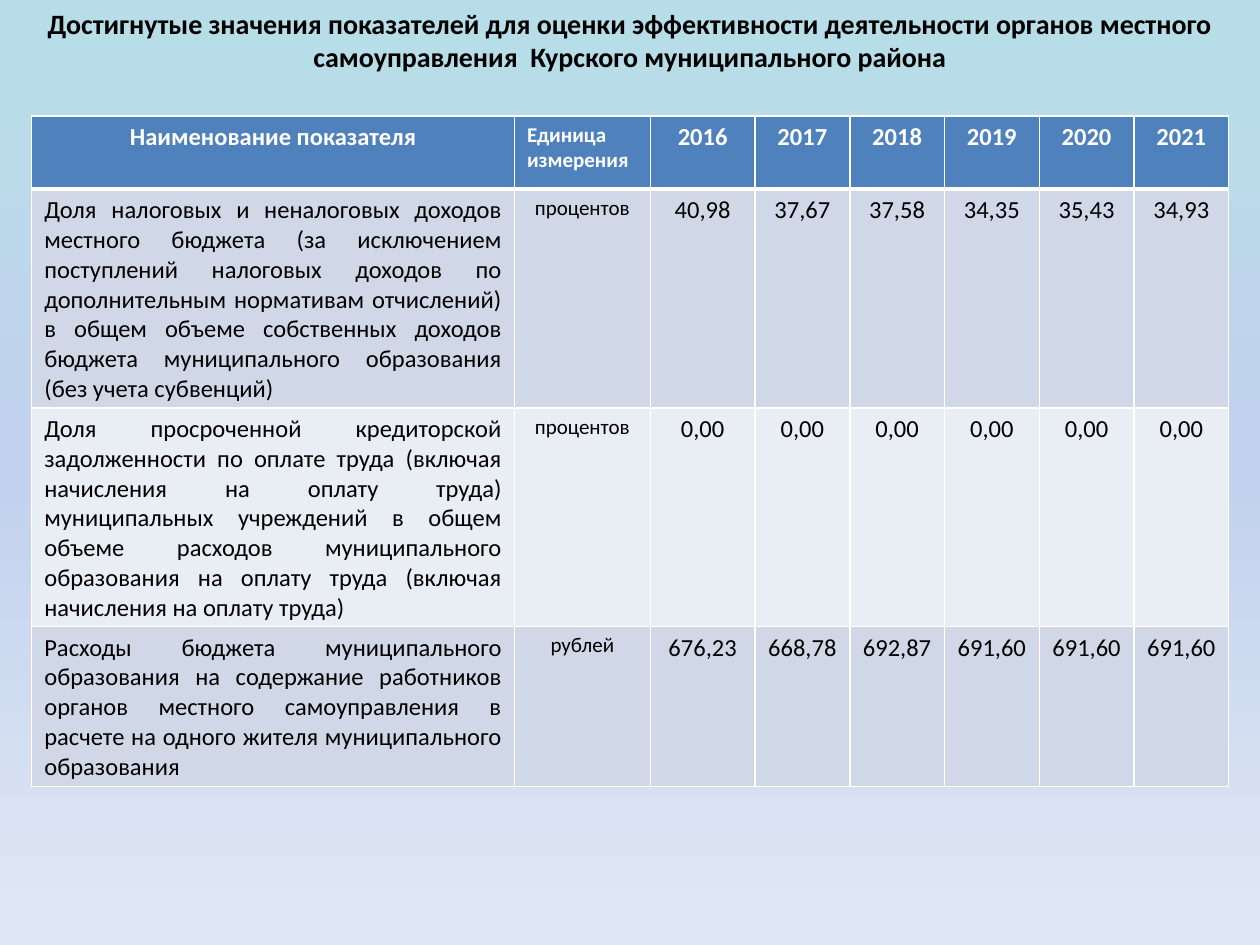
"""Build the slide with the table of municipal performance indicators."""
from dataclasses import dataclass

from lxml import etree
from pptx import Presentation
from pptx.dml.color import RGBColor
from pptx.enum import text as t
from pptx.oxml import ns
from pptx.util import Cm, Pt

FONT = "Calibri"
WHITE, BLACK, HEAD = "FFFFFF", "000000", "4F81BD"
BANDS = ("D0D8E8", "E9EDF4")
LEFT, MID, JUST = t.PP_ALIGN.LEFT, t.PP_ALIGN.CENTER, t.PP_ALIGN.JUSTIFY
STOPS = ((0, "B7DEE8"), (50, "C2D1ED"), (100, "E1E8F5"))
WIDTHS = (9.73, 2.74, 2.11) + (1.91,) * 5


@dataclass
class Row:
    name: str
    unit: str
    values: list[str]
    height: float


@dataclass
class Look:
    size: int
    align: t.PP_ALIGN
    color: str = BLACK
    bold: bool = False


ROWS = [
    Row("Наименование показателя", "Единица измерения",
        ["2016", "2017", "2018", "2019", "2020", "2021"], 1.47),
    Row("Доля налоговых и неналоговых доходов местного бюджета (за исключением "
        "поступлений налоговых доходов по дополнительным нормативам отчислений) "
        "в общем объеме собственных доходов бюджета муниципального образования "
        "(без учета субвенций)", "процентов",
        ["40,98", "37,67", "37,58", "34,35", "35,43", "34,93"], 4.41),
    Row("Доля просроченной кредиторской задолженности по оплате труда (включая "
        "начисления на оплату труда) муниципальных учреждений в общем объеме "
        "расходов муниципального образования на оплату труда (включая "
        "начисления на оплату труда)", "процентов", ["0,00"] * 6, 4.41),
    Row("Расходы бюджета муниципального образования на содержание работников "
        "органов местного самоуправления в расчете на одного жителя "
        "муниципального образования", "рублей",
        ["676,23", "668,78", "692,87", "691,60", "691,60", "691,60"], 3.22),
]


def rgb(code: str) -> RGBColor:
    """Turn a hex string into a colour."""
    return RGBColor.from_string(code)


def add(node, tag: str, **attrs: str):
    """Append a drawing element with its attributes."""
    return etree.SubElement(node, ns.qn(f"a:{tag}"), attrs)


def shade(slide) -> None:
    """Give the slide its vertical three-stop gradient."""
    fill = slide.background.fill
    fill.gradient()
    fill.gradient_angle = 270
    stops = slide.element.find(f".//{ns.qn('a:gsLst')}")
    for old in list(stops):
        stops.remove(old)
    for pos, code in STOPS:
        add(add(stops, "gs", pos=str(pos * 1000)), "srgbClr", val=code)


def write(frame, words: str, look: Look) -> None:
    """Put one formatted paragraph into a text frame."""
    frame.text = words
    para = frame.paragraphs[0]
    para.alignment = look.align
    font = para.font
    font.name, font.size, font.bold = FONT, Pt(look.size), look.bold
    font.color.rgb = rgb(look.color)


def edge(cell, base: int) -> None:
    """Draw white borders round a cell, with the given bottom width."""
    props = cell._tc.get_or_add_tcPr()
    for spot, side in enumerate("LRTB"):
        width = Pt(base if side == "B" else 1)
        line = add(props, f"ln{side}", w=str(width))
        add(add(line, "solidFill"), "srgbClr", val=WHITE)
        props.insert(spot, line)


def draw(slide, rows: list[Row]) -> None:
    """Draw the table of indicators."""
    frame = slide.shapes.add_table(
        len(rows), len(WIDTHS), Cm(0.64), Cm(2.34),
        Cm(sum(WIDTHS)), Cm(sum(row.height for row in rows)))
    table = frame.table
    for col, width in zip(table.columns, WIDTHS):
        col.width = Cm(width)
    for i, row in enumerate(rows):
        table.rows[i].height = Cm(row.height)
        top = i == 0
        ink = WHITE if top else BLACK
        looks = [Look(14, MID if top else JUST, ink, top),
                 Look(12, LEFT if top else MID, ink, top)]
        looks += [Look(14, MID, ink, top)] * len(row.values)
        for j, words in enumerate([row.name, row.unit, *row.values]):
            cell = table.cell(i, j)
            write(cell.text_frame, words, looks[j])
            cell.fill.solid()
            cell.fill.fore_color.rgb = rgb(HEAD if top else BANDS[(i - 1) % 2])
            edge(cell, 3 if top else 1)


def main() -> None:
    """Build and save the slide."""
    deck = Presentation()
    deck.slide_width, deck.slide_height = Cm(25.4), Cm(19.05)
    slide = deck.slides.add_slide(deck.slide_layouts[5])
    shade(slide)
    title = slide.shapes.title
    title.left, title.top, title.width, title.height = Cm(0), Cm(0), Cm(25.4), Cm(1.62)
    frame = title.text_frame
    frame.word_wrap = True
    frame.auto_size = t.MSO_AUTO_SIZE.SHAPE_TO_FIT_TEXT
    frame.vertical_anchor = t.MSO_ANCHOR.TOP
    write(frame, "Достигнутые значения показателей для оценки эффективности "
          "деятельности органов местного самоуправления  Курского "
          "муниципального района", Look(16, MID, bold=True))
    draw(slide, ROWS)
    deck.save("out.pptx")


if __name__ == "__main__":
    main()
